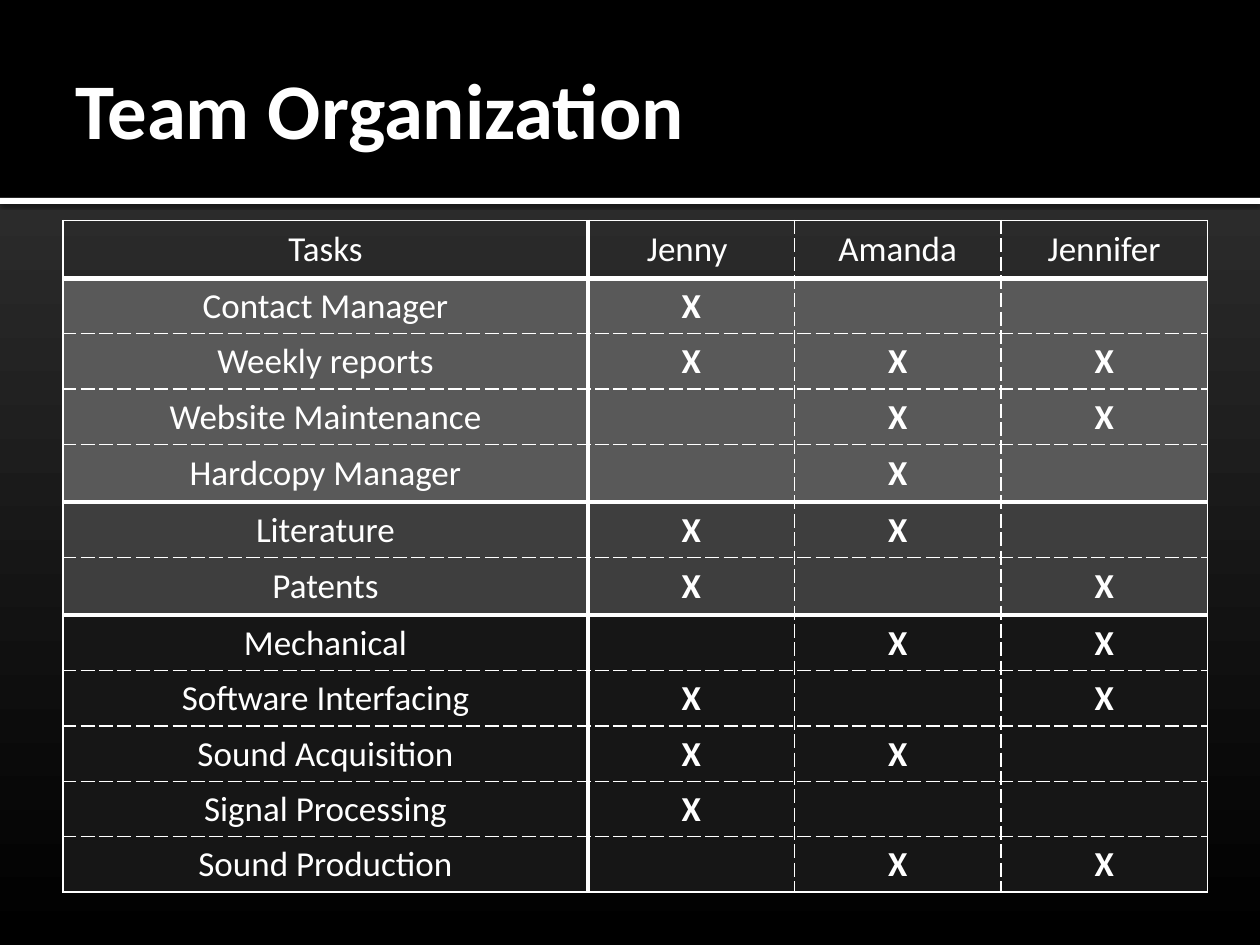
from lxml import etree
from pptx import Presentation
from pptx import util as u
from pptx.dml import color
from pptx.enum import shapes, text
from pptx.oxml import ns

FONT = "Calibri"
WHITE = "FFFFFF"
HEADER = ["Tasks", "Jenny ", "Amanda", "Jennifer"]
GROUPS = [
    ("595959", [
        ("Contact Manager", "X", "", ""),
        ("Weekly reports", "X", "X", "X"),
        ("Website Maintenance", "", "X", "X"),
        ("Hardcopy Manager", "", "X", ""),
    ]),
    ("3E3E3E", [
        ("Literature", "X", "X", ""),
        ("Patents", "X", "", "X"),
    ]),
    ("161616", [
        ("Mechanical", "", "X", "X"),
        ("Software Interfacing", "X", "", "X"),
        ("Sound Acquisition", "X", "X", ""),
        ("Signal Processing", "X", "", ""),
        ("Sound Production", "", "X", "X"),
    ]),
]
THIN, THICK, DASHED = (1, "solid"), (3, "solid"), (1, "sysDash")


def rgb(value):
    return color.RGBColor.from_string(value)


def sub(parent, tag, **attrs):
    return etree.SubElement(parent, ns.qn(tag), {k: str(v) for k, v in attrs.items()})


def set_background(s, top, bottom):
    fill = s.background.fill
    fill.gradient()
    fill.gradient_angle = 270
    for stop, value in zip(fill.gradient_stops, (top, bottom)):
        stop.color.rgb = rgb(value)


def add_run(p, content, size, bold):
    r = p.add_run()
    r.text = content
    r.font.name = FONT
    r.font.size = u.Pt(size)
    r.font.bold = bold
    r.font.color.rgb = rgb(WHITE)


def add_band(s, top, height, fill):
    sp = s.shapes.add_shape(shapes.MSO_SHAPE.RECTANGLE,
                            0, u.Pt(top), u.Pt(720), u.Pt(height))
    sp.shadow.inherit = False
    sp.fill.solid()
    sp.fill.fore_color.rgb = rgb(fill)
    sp.line.fill.background()
    return sp


def add_shadow(sp):
    effects = sp._element.spPr.find(ns.qn("a:effectLst"))
    shadow = sub(effects, "a:outerShdw", blurRad=u.Pt(2.5), dist=u.Pt(0.8),
                 dir=5400000, algn="t", rotWithShape=0)
    sub(sub(shadow, "a:srgbClr", val="000000"), "a:alpha", val=60000)


def add_title(s, content):
    tf = s.shapes.add_textbox(u.Pt(36), u.Pt(12.25), u.Pt(648), u.Pt(98.5)).text_frame
    tf.word_wrap = True
    tf.vertical_anchor = text.MSO_ANCHOR.MIDDLE
    tf.margin_left = u.Pt(7.2)
    tf.margin_top = tf.margin_right = tf.margin_bottom = u.Pt(3.6)
    add_run(tf.paragraphs[0], content, 45, True)


def set_border(cell, side, style):
    width, dash = style
    ln = sub(cell._tc.get_or_add_tcPr(), f"a:ln{side}", w=u.Pt(width))
    sub(sub(ln, "a:solidFill"), "a:srgbClr", val=WHITE)
    sub(ln, "a:prstDash", val=dash)


def fill_cell(cell, content, fill, borders):
    for side, style in zip("LRTB", borders):
        set_border(cell, side, style)
    if fill:
        cell.fill.solid()
        cell.fill.fore_color.rgb = rgb(fill)
    else:
        cell.fill.background()
    cell.margin_left = cell.margin_right = cell.margin_top = u.Pt(0.7)
    cell.margin_bottom = 0
    cell.vertical_anchor = text.MSO_ANCHOR.MIDDLE
    p = cell.text_frame.paragraphs[0]
    p.alignment = text.PP_ALIGN.CENTER
    if content:
        add_run(p, content, 20, content == "X")


def add_task_table(s):
    rows = [(None, HEADER)]
    h_lines = [THIN, THICK]
    for fill, tasks in GROUPS:
        rows += [(fill, task) for task in tasks]
        h_lines += [DASHED] * (len(tasks) - 1) + [THICK]
    h_lines[-1] = THIN
    v_lines = [THIN, THICK, DASHED, DASHED, THIN]

    table = s.shapes.add_table(len(rows), len(HEADER), u.Pt(36), u.Pt(126),
                               u.Pt(654), u.Pt(383.85)).table
    table.first_row = table.horz_banding = False
    for col, width in zip(table.columns, (300, 118, 118, 118)):
        col.width = u.Pt(width)
    for i, (fill, values) in enumerate(rows):
        table.rows[i].height = u.Pt(33 if h_lines[i + 1] == THICK else 31.65)
        for j, value in enumerate(values):
            borders = (*v_lines[j:j + 2], *h_lines[i:i + 2])
            fill_cell(table.cell(i, j), value, fill, borders)


def main():
    prs = Presentation()
    prs.slide_width, prs.slide_height = u.Pt(720), u.Pt(540)
    s = prs.slides.add_slide(prs.slide_layouts[6])
    set_background(s, "373737", "000000")
    add_shadow(add_band(s, 113, 3.6, WHITE))
    add_band(s, 0, 113, "000000")
    add_title(s, "Team Organization")
    add_task_table(s)
    prs.save("out.pptx")


if __name__ == "__main__":
    main()
